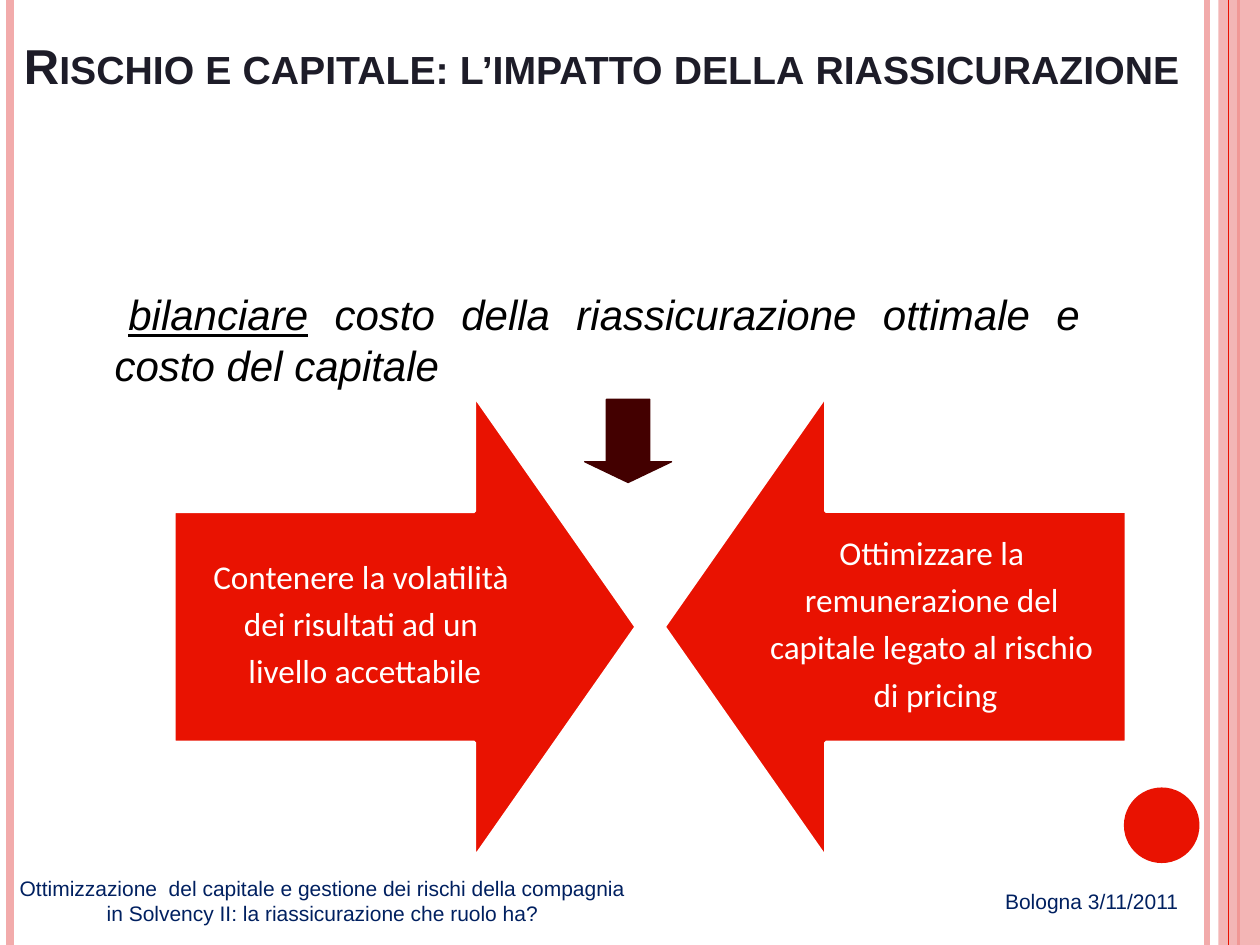
from lxml import etree
from pptx import Presentation
from pptx.dml.color import RGBColor
from pptx.enum import shapes, text
from pptx.oxml import ns
from pptx.util import Inches, Pt

RED, PINK, NAVY, DARK = "E91201", "F2ABAB", "002060", "430000"
KIND = shapes.MSO_SHAPE
ALIGN = text.PP_ALIGN

deck = Presentation()
deck.slide_width, deck.slide_height = Inches(10), Inches(7.5)
slide = deck.slides.add_slide(deck.slide_layouts[6])


def shape(kind, box, fill, line=None, width=0):
    item = slide.shapes.add_shape(kind, *map(Inches, box))
    item.shadow.inherit = False
    item.fill.solid()
    item.fill.fore_color.rgb = RGBColor.from_string(fill)
    if line:
        item.line.color.rgb = RGBColor.from_string(line)
        item.line.width = Pt(width)
    else:
        item.line.fill.background()
    return item


def write(rows, box, size, color, font="Arial", align=ALIGN.CENTER,
          anchor=text.MSO_ANCHOR.TOP, pad=(0.1, 0.05), bold=False,
          italic=False, caps=False, under=None, space=None, after=0, indent=0):
    frame = slide.shapes.add_textbox(*map(Inches, box)).text_frame
    frame.word_wrap = True
    frame.vertical_anchor = anchor
    frame.margin_left = frame.margin_right = Inches(pad[0])
    frame.margin_top = frame.margin_bottom = Inches(pad[1])
    for i, row in enumerate(rows):
        para = frame.add_paragraph() if i else frame.paragraphs[0]
        para.alignment = align
        para.space_after = Pt(after)
        if space:
            para.line_spacing = space
        if indent:
            para._p.get_or_add_pPr().set("indent", str(Inches(indent)))
        for part in [under, row] if under else [row]:
            run = para.add_run()
            run.text = part
            face = run.font
            face.name, face.size = font, Pt(size)
            face.bold, face.italic = bold, italic
            face.underline = part == under
            face.color.rgb = RGBColor.from_string(color)
            if caps:
                run._r.get_or_add_rPr().set("cap", "small")


for x, color, width in [(9.58, PINK, 3), (0.08, PINK, 4.5),
                        (9.83, RED, 1.5), (9.75, RED, 0.75)]:
    if x == 9.75:
        band = shape(KIND.RECTANGLE, (9.67, 0, 0.33, 7.5), PINK)
        tint = band._element.spPr.find(".//" + ns.qn("a:srgbClr"))
        etree.SubElement(tint, ns.qn("a:alpha"), val="87000")
    rule = slide.shapes.add_connector(
        shapes.MSO_CONNECTOR.STRAIGHT, Inches(x), 0, Inches(x), Inches(7.5))
    rule.line.color.rgb = RGBColor.from_string(color)
    rule.line.width = Pt(width)
    etree.SubElement(rule._element.spPr, ns.qn("a:effectLst"))

shape(KIND.OVAL, (8.92, 6.25, 0.6, 0.6), RED)

write(["Rischio e capitale: l’impatto della riassicurazione"],
      (0.19, -0.5, 9.38, 1.25), 28, "1D1C28", align=ALIGN.LEFT,
      anchor=text.MSO_ANCHOR.BOTTOM, pad=(0, 0), bold=True, caps=True)
write([" costo della riassicurazione ottimale e costo del capitale"],
      (0.91, 2.29, 7.66, 0.85), 24, "000000", align=ALIGN.JUSTIFY,
      pad=(0, 0), italic=True, under="bilanciare", space=Pt(29), indent=0.11)

shape(KIND.DOWN_ARROW, (4.64, 3.17, 0.69, 0.66), DARK, DARK, 0.75).adjustments[1] = 0.25

sides = [
    (1.38, 270, 1.38, ["Contenere la volatilità ", "dei risultati ad un ",
                       "livello accettabile"]),
    (5.27, 90, 5.91, ["Ottimizzare la ", "remunerazione del ",
                      "capitale legato al rischio ", "di pricing"]),
]
for left, turn, start, rows in sides:
    arrow = shape(KIND.DOWN_ARROW, (left, 3.14, 3.67, 3.67), RED, "FFFFFF", 2)
    arrow.rotation = turn
    arrow.adjustments[1] = 0.35
    write(rows, (start, 4.05, 3.03, 1.83), 19, "FFFFFF", font="Calibri",
          anchor=text.MSO_ANCHOR.MIDDLE, pad=(0.15, 0.15), space=0.9, after=6.5)

write(["Ottimizzazione  del capitale e gestione dei rischi della compagnia "
       "in Solvency II: la riassicurazione che ruolo ha?"],
      (0, 6.9, 5.12, 0.5), 12, NAVY)
write(["Bologna 3/11/2011"], (7.6, 7, 2.13, 0.5), 12, NAVY)

deck.save("out.pptx")
